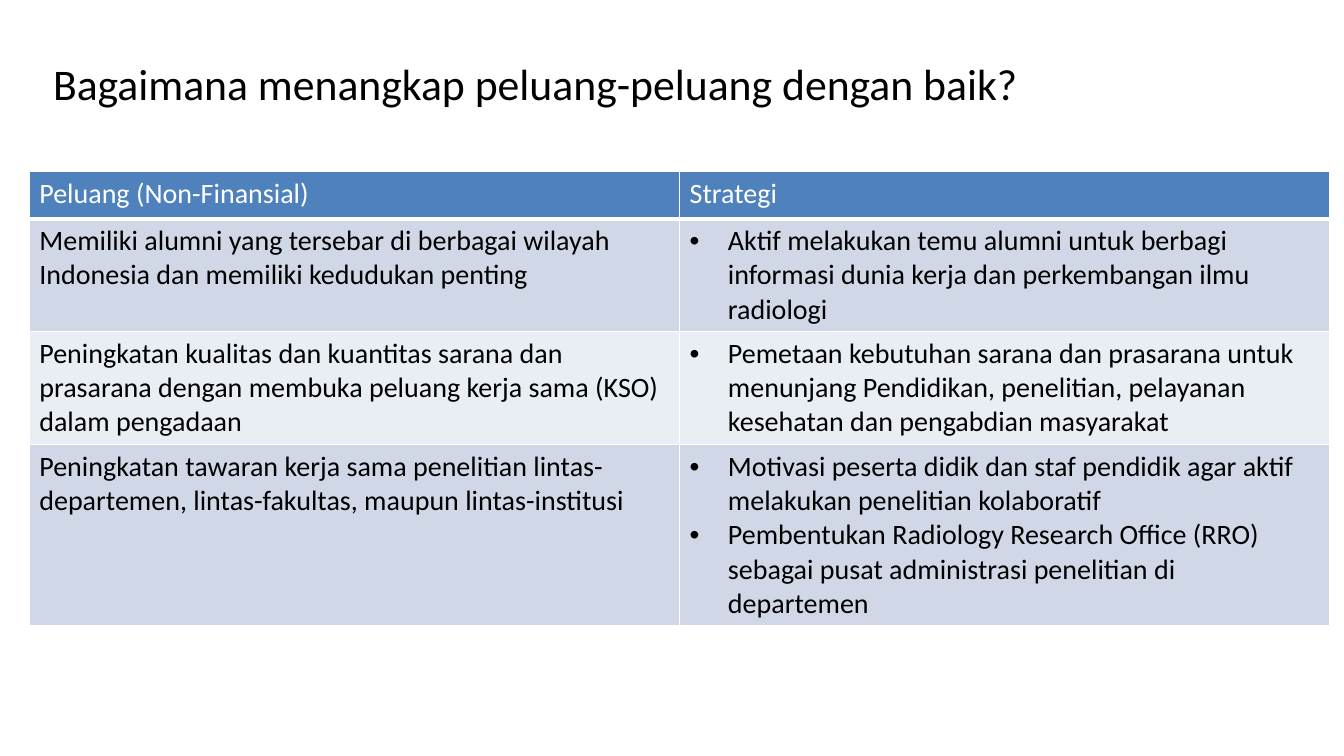
"""Build the slide on strategies for seizing non-financial opportunities."""
from lxml.etree import SubElement
from pptx import Presentation
from pptx.dml.color import RGBColor
from pptx.enum.text import MSO_ANCHOR, PP_ALIGN
from pptx.oxml.ns import qn
from pptx.util import Inches, Pt

TITLE = "Bagaimana menangkap peluang-peluang dengan baik?"
HEADINGS = ("Peluang (Non-Finansial)", "Strategi")
OPPORTUNITIES = [
    ("Memiliki alumni yang tersebar di berbagai wilayah Indonesia dan memiliki kedudukan penting",
     ["Aktif melakukan temu alumni untuk berbagi informasi dunia kerja dan perkembangan ilmu radiologi"]),
    ("Peningkatan kualitas dan kuantitas sarana dan prasarana dengan membuka peluang kerja sama (KSO) "
     "dalam pengadaan",
     ["Pemetaan kebutuhan sarana dan prasarana untuk menunjang Pendidikan, penelitian, pelayanan "
      "kesehatan dan pengabdian masyarakat"]),
    ("Peningkatan tawaran kerja sama penelitian lintas-departemen, lintas-fakultas, maupun lintas-institusi",
     ["Motivasi peserta didik dan staf pendidik agar aktif melakukan penelitian kolaboratif",
      "Pembentukan Radiology Research Office (RRO) sebagai pusat administrasi penelitian di departemen"]),
]
COLORS = {"text": "000000", "heading_text": "FFFFFF", "border": "FFFFFF",
          "heading": "4F81BD", "odd": "D0D8E8", "even": "E9EDF4"}
TITLE_BOX = (0.18, 0.31, 10.26, 1.03)
TABLE_LEFT, TABLE_TOP, COLUMN_WIDTH = 0.29, 1.7, 6.45
ROW_HEIGHTS = (0.47, 1.12, 1.12, 1.8)
BULLET_INDENT = Inches(0.38)


def style_font(paragraph, size, color):
    for name, value in {"name": "Calibri", "size": Pt(size), "bold": False}.items():
        setattr(paragraph.font, name, value)
    paragraph.font.color.rgb = RGBColor.from_string(COLORS[color])


def add_bullet(paragraph):
    properties = paragraph._p.get_or_add_pPr()
    properties.set("marL", str(BULLET_INDENT))
    properties.set("indent", str(-BULLET_INDENT))
    SubElement(properties, qn("a:buFont")).set("typeface", "Arial")
    SubElement(properties, qn("a:buChar")).set("char", "•")


def add_borders(cell, bottom_width):
    properties = cell._tc.get_or_add_tcPr()
    for side, width in {"L": 1, "R": 1, "T": 1, "B": bottom_width}.items():
        line = SubElement(properties, qn(f"a:ln{side}"), w=str(Pt(width)))
        fill = SubElement(line, qn("a:solidFill"))
        SubElement(fill, qn("a:srgbClr")).set("val", COLORS["border"])


def fill_cell(cell, lines, fill, color, bulleted, bottom_width):
    add_borders(cell, bottom_width)
    cell.fill.solid()
    cell.fill.fore_color.rgb = RGBColor.from_string(COLORS[fill])
    cell.text_frame.text = "\n".join(lines)
    for paragraph in cell.text_frame.paragraphs:
        if bulleted:
            add_bullet(paragraph)
        style_font(paragraph, 20, color)


def add_title(slide):
    frame = slide.shapes.add_textbox(*map(Inches, TITLE_BOX)).text_frame
    for name, value in {"text": TITLE, "word_wrap": True, "vertical_anchor": MSO_ANCHOR.MIDDLE}.items():
        setattr(frame, name, value)
    paragraph = frame.paragraphs[0]
    paragraph.alignment = PP_ALIGN.CENTER
    style_font(paragraph, 31.2, "text")


def add_strategy_table(slide):
    bounds = (TABLE_LEFT, TABLE_TOP, COLUMN_WIDTH * len(HEADINGS), sum(ROW_HEIGHTS))
    table = slide.shapes.add_table(len(ROW_HEIGHTS), len(HEADINGS), *map(Inches, bounds)).table
    for column in table.columns:
        column.width = Inches(COLUMN_WIDTH)
    for row, height in zip(table.rows, ROW_HEIGHTS):
        row.height = Inches(height)
    for index, heading in enumerate(HEADINGS):
        fill_cell(table.cell(0, index), [heading], "heading", "heading_text", False, 3)
    for index, (opportunity, strategies) in enumerate(OPPORTUNITIES, 1):
        fill = "odd" if index % 2 else "even"
        fill_cell(table.cell(index, 0), [opportunity], fill, "text", False, 1)
        fill_cell(table.cell(index, 1), strategies, fill, "text", True, 1)


def main():
    presentation = Presentation()
    presentation.slide_width, presentation.slide_height = Inches(13.33), Inches(7.5)
    slide = presentation.slides.add_slide(presentation.slide_layouts[6])
    add_title(slide)
    add_strategy_table(slide)
    presentation.save("out.pptx")


if __name__ == "__main__":
    main()
